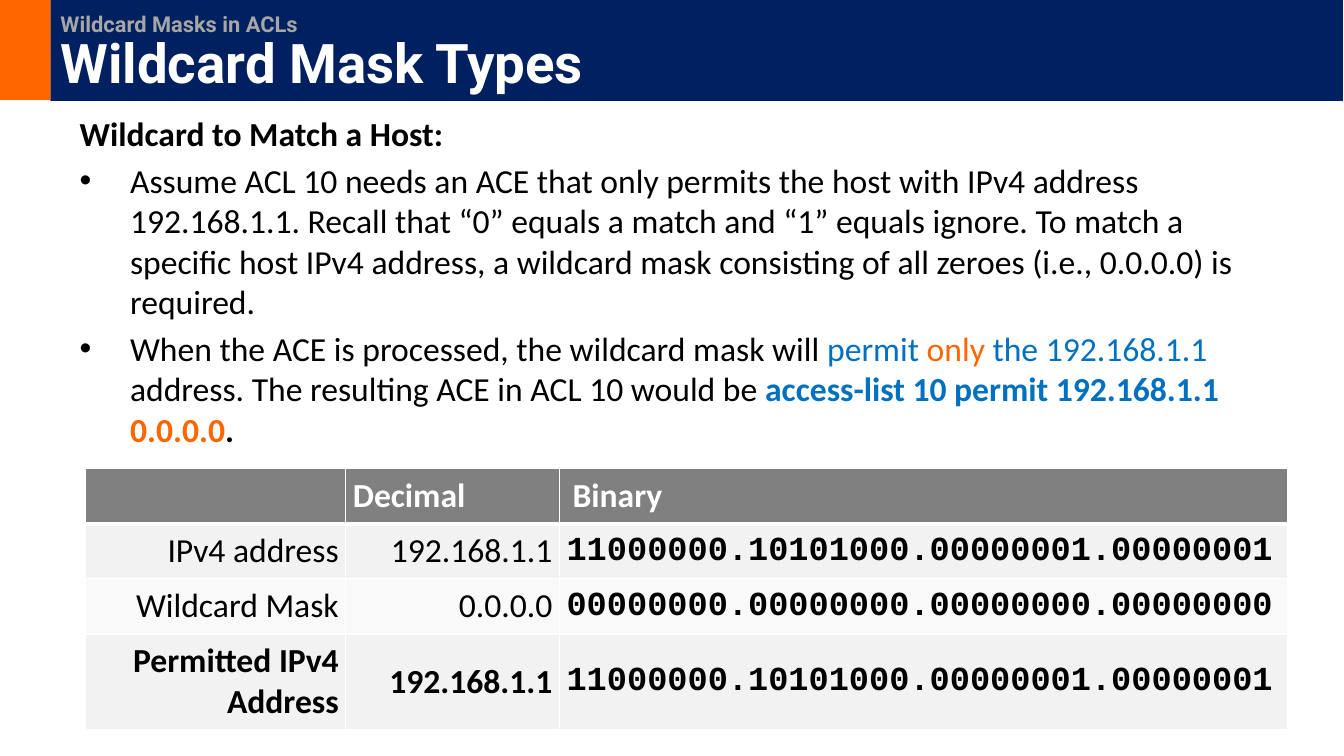
from lxml import etree
from pptx import Presentation
from pptx.dml.color import RGBColor
from pptx.enum.shapes import MSO_SHAPE
from pptx.enum.text import MSO_ANCHOR, MSO_AUTO_SIZE, PP_ALIGN
from pptx.oxml.ns import qn
from pptx.util import Inches, Pt

RECTANGLE = MSO_SHAPE.RECTANGLE
TOP, MIDDLE, BOTTOM = MSO_ANCHOR.TOP, MSO_ANCHOR.MIDDLE, MSO_ANCHOR.BOTTOM
LEFT, RIGHT = PP_ALIGN.LEFT, PP_ALIGN.RIGHT
NO_AUTOFIT = MSO_AUTO_SIZE.NONE

COLORS = {
    "navy": "002060", "orange": "FF6600", "blue": "0070C0",
    "black": "000000", "white": "FFFFFF", "topic": "A6A6A6",
    "header": "808080", "odd_row": "F2F2F2", "even_row": "F9F9F9",
}
BODY_FONT, BINARY_FONT, TITLE_FONT = "Calibri", "Courier New", "Roboto"

EXPLANATION = [
    (False, [("Wildcard to Match a Host:", "black", True)]),
    (True, [("Assume ACL 10 needs an ACE that only permits the host with IPv4 address "
             "192.168.1.1. Recall that “0” equals a match and “1” equals ignore. To match "
             "a specific host IPv4 address, a wildcard mask consisting of all zeroes "
             "(i.e., 0.0.0.0) is required.", "black", False)]),
    (True, [("When the ACE is processed, the wildcard mask will ", "black", False),
            ("permit ", "blue", False),
            ("only", "orange", False),
            (" the 192.168.1.1 ", "blue", False),
            ("address. The resulting ACE in ACL 10 would be ", "black", False),
            ("access-list 10 permit 192.168.1.1 ", "blue", True),
            ("0.0.0.0", "orange", True),
            (".", "black", True)]),
]
MASK_ROWS = [
    ("", "Decimal", "Binary"),
    ("IPv4 address", "192.168.1.1", "11000000.10101000.00000001.00000001"),
    ("Wildcard Mask", "0.0.0.0", "00000000.00000000.00000000.00000000"),
    ("Permitted IPv4 Address", "192.168.1.1", "11000000.10101000.00000001.00000001"),
]
COLUMN_WIDTHS = (2.58, 2.12, 7.22)
ROW_HEIGHTS = (0.54, 0.54, 0.54, 0.85)


def color(name):
    """Return the palette colour with the given name."""
    return RGBColor.from_string(COLORS[name])


def apply(target, values):
    """Set each named attribute on the target."""
    for attribute, value in values.items():
        setattr(target, attribute, value)


def place(shape, left, top, width, height):
    """Move and size a shape in inches."""
    apply(shape, {"left": Inches(left), "top": Inches(top),
                  "width": Inches(width), "height": Inches(height)})


def add_run(paragraph, text, color_name, bold=True, size=24, font=BODY_FONT):
    """Append one formatted run to a paragraph."""
    run = paragraph.add_run()
    run.text = text
    apply(run.font, {"name": font, "size": Pt(size), "bold": bold})
    run.font.color.rgb = color(color_name)


def add_accent(slide):
    """Add the orange block at the left of the title band."""
    accent = slide.shapes.add_shape(RECTANGLE, 0, 0, Inches(0.5), Inches(0.99))
    accent.shadow.inherit = False
    accent.fill.solid()
    accent.fill.fore_color.rgb = color("orange")
    accent.line.fill.background()


def fill_title(title):
    """Turn the title placeholder into the navy band with topic and heading."""
    place(title, 0.5, 0, 12.82, 1)
    title.fill.solid()
    title.fill.fore_color.rgb = color("navy")
    apply(title.text_frame, {"auto_size": NO_AUTOFIT, "word_wrap": True,
                             "vertical_anchor": BOTTOM})
    heading = title.text_frame.paragraphs[0]
    apply(heading, {"alignment": LEFT, "line_spacing": 0.9})
    add_run(heading, "Wildcard Masks in ACLs", "topic", size=15.6, font=TITLE_FONT)
    heading.add_line_break()
    add_run(heading, "Wildcard Mask Types", "white", size=39, font=TITLE_FONT)


def set_bullet(paragraph, bulleted):
    """Give a paragraph a hanging bullet, or neither bullet nor indent."""
    indent = Inches(0.5) if bulleted else 0
    properties = paragraph._p.get_or_add_pPr()
    properties.set("marL", str(indent))
    properties.set("indent", str(-indent))
    if bulleted:
        etree.SubElement(properties, qn("a:buFont"), typeface="Arial")
        etree.SubElement(properties, qn("a:buChar"), char="•")
    else:
        etree.SubElement(properties, qn("a:buNone"))


def fill_body(body):
    """Write the explanation into the body placeholder."""
    place(body, 0.69, 1.07, 12.07, 3.53)
    frame = body.text_frame
    apply(frame, {"auto_size": NO_AUTOFIT, "word_wrap": True, "vertical_anchor": TOP})
    for index, (bulleted, runs) in enumerate(EXPLANATION):
        paragraph = frame.add_paragraph() if index else frame.paragraphs[0]
        set_bullet(paragraph, bulleted)
        for text, color_name, bold in runs:
            add_run(paragraph, text, color_name, bold)


def set_borders(cell, bottom_width):
    """Draw white borders around a cell."""
    properties = cell._tc.get_or_add_tcPr()
    widths = {"lnL": 1, "lnR": 1, "lnT": 1, "lnB": bottom_width}
    for position, (side, width) in enumerate(widths.items()):
        border = etree.Element(qn(f"a:{side}"), w=str(Pt(width)))
        fill = etree.SubElement(border, qn("a:solidFill"))
        etree.SubElement(fill, qn("a:srgbClr"), val=COLORS["white"])
        properties.insert(position, border)


def fill_cell(cell, text, row, column):
    """Format one table cell by its row and column."""
    is_header, is_binary = row == 0, column == 2
    side = Inches(0.13 if is_header and is_binary else 0.07)
    apply(cell, {"margin_left": side, "margin_right": side,
                 "margin_top": Inches(0.07), "margin_bottom": Inches(0.07),
                 "vertical_anchor": TOP if is_header and is_binary else MIDDLE})
    fill_name = "header" if is_header else "odd_row" if row % 2 else "even_row"
    cell.fill.solid()
    cell.fill.fore_color.rgb = color(fill_name)
    set_borders(cell, 3 if is_header else 1)
    if text:
        paragraph = cell.text_frame.paragraphs[0]
        paragraph.alignment = LEFT if is_header or is_binary else RIGHT
        add_run(paragraph, text, "white" if is_header else "black",
                bold=is_header or is_binary or row == len(MASK_ROWS) - 1,
                font=BINARY_FONT if is_binary and not is_header else BODY_FONT)


def add_mask_table(slide):
    """Add the table of decimal and binary addresses."""
    table = slide.shapes.add_table(
        len(ROW_HEIGHTS), len(COLUMN_WIDTHS), Inches(0.85), Inches(4.65),
        Inches(sum(COLUMN_WIDTHS)), Inches(sum(ROW_HEIGHTS))).table
    for column, width in zip(table.columns, COLUMN_WIDTHS):
        column.width = Inches(width)
    for row, height in zip(table.rows, ROW_HEIGHTS):
        row.height = Inches(height)
    for row, texts in enumerate(MASK_ROWS):
        for column, text in enumerate(texts):
            fill_cell(table.cell(row, column), text, row, column)


def main():
    """Build the slide and save it."""
    presentation = Presentation()
    apply(presentation, {"slide_width": Inches(13.33), "slide_height": Inches(7.5)})
    slide = presentation.slides.add_slide(presentation.slide_layouts[1])
    add_accent(slide)
    fill_title(slide.shapes.title)
    fill_body(slide.placeholders[1])
    add_mask_table(slide)
    presentation.save("out.pptx")


if __name__ == "__main__":
    main()
